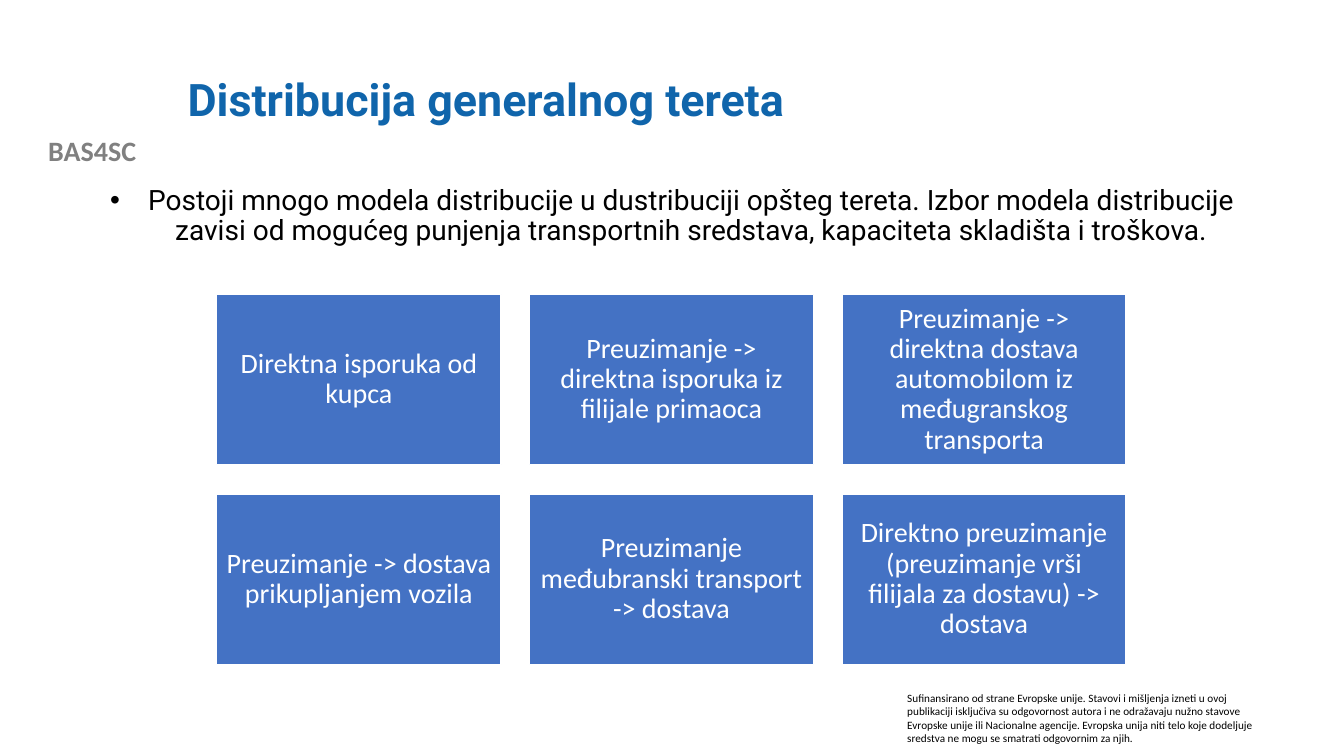
from pptx import Presentation
from pptx.dml.color import RGBColor
from pptx.enum.shapes import MSO_SHAPE
from pptx.enum.text import MSO_ANCHOR, MSO_AUTO_SIZE, PP_ALIGN
from pptx.util import Inches, Pt
from lxml.etree import SubElement
from pptx.oxml.ns import qn

WHITE = RGBColor(0xFF, 0xFF, 0xFF)
BLACK = RGBColor(0x00, 0x00, 0x00)
GRAY = RGBColor(0x80, 0x80, 0x80)
TITLE_BLUE = RGBColor(0x10, 0x65, 0xAB)
CARD_BLUE = RGBColor(0x44, 0x72, 0xC4)

MODELS = [
    "Direktna isporuka od kupca",
    "Preuzimanje -> direktna isporuka iz filijale primaoca",
    "Preuzimanje -> direktna dostava automobilom iz međugranskog transporta",
    "Preuzimanje -> dostava prikupljanjem vozila",
    "Preuzimanje međubranski transport -> dostava",
    "Direktno preuzimanje (preuzimanje vrši filijala za dostavu) -> dostava",
]


class DistributionSlide:
    heading_font = "Roboto"
    text_font = "Calibri"

    def __init__(self, presentation):
        self.slide = presentation.slides.add_slide(presentation.slide_layouts[1])

    def set_text(self, shape, text, size, color, font, bold=False,
                 align=PP_ALIGN.CENTER, anchor=MSO_ANCHOR.TOP, spacing=0.9):
        frame = shape.text_frame
        frame.word_wrap = True
        frame.auto_size = MSO_AUTO_SIZE.NONE
        frame.vertical_anchor = anchor
        frame.text = text
        paragraph = frame.paragraphs[0]
        paragraph.alignment = align
        paragraph.line_spacing = spacing
        paragraph.space_before = Pt(0)
        paragraph.font.name = font
        paragraph.font.size = Pt(size)
        paragraph.font.bold = bold
        paragraph.font.color.rgb = color
        return frame

    def place(self, shape, left, top, width, height):
        shape.left, shape.top = Inches(left), Inches(top)
        shape.width, shape.height = Inches(width), Inches(height)

    def title(self, text, *box):
        heading = self.slide.shapes.title
        self.place(heading, *box)
        self.set_text(heading, text, 32, TITLE_BLUE, self.heading_font, bold=True,
                      align=PP_ALIGN.LEFT, anchor=MSO_ANCHOR.MIDDLE)

    def body(self, text, *box):
        intro = self.slide.placeholders[1]
        self.place(intro, *box)
        properties = intro.text_frame.paragraphs[0]._p.get_or_add_pPr()
        properties.set("marL", "0")
        properties.set("indent", "0")
        SubElement(properties, qn("a:buNone"))
        self.set_text(intro, text, 20, BLACK, self.heading_font)

    def label(self, text, box, size, color, **style):
        caption = self.slide.shapes.add_textbox(*map(Inches, box))
        self.set_text(caption, text, size, color, self.text_font, spacing=1.0, **style)

    def card(self, text, *box):
        card = self.slide.shapes.add_shape(MSO_SHAPE.RECTANGLE, *map(Inches, box))
        card.shadow.inherit = False
        card.fill.solid()
        card.fill.fore_color.rgb = CARD_BLUE
        card.line.color.rgb = WHITE
        card.line.width = Pt(1)
        frame = self.set_text(card, text, 20, WHITE, self.text_font,
                              anchor=MSO_ANCHOR.MIDDLE)
        frame.margin_left = frame.margin_right = Inches(0.08)
        frame.margin_top = frame.margin_bottom = Inches(0.08)

    def card_grid(self, texts, left, top, columns, step_x, step_y, width, height):
        for index, text in enumerate(texts):
            row, column = divmod(index, columns)
            self.card(text, left + column * step_x, top + row * step_y, width, height)


def main():
    presentation = Presentation()
    presentation.slide_width = Inches(13.33)
    presentation.slide_height = Inches(7.5)

    page = DistributionSlide(presentation)
    page.title("Distribucija generalnog tereta", 1.76, 0.4, 10.66, 1.22)
    page.body(
        "Postoji mnogo modela distribucije u dustribuciji opšteg tereta. "
        "Izbor modela distribucije zavisi od mogućeg punjenja transportnih "
        "sredstava, kapaciteta skladišta i troškova.",
        0.92, 1.8, 11.5, 1.33)
    page.label("BAS4SC", (0, 1.28, 1.83, 0.44), 20, GRAY, bold=True)
    page.label(
        "Sufinansirano od strane Evropske unije. Stavovi i mišljenja izneti u ovoj "
        "publikaciji isključiva su odgovornost autora i ne odražavaju nužno stavove "
        "Evropske unije ili Nacionalne agencije. Evropska unija niti telo koje "
        "dodeljuje sredstva ne mogu se smatrati odgovornim za njih.",
        (8.9, 6.81, 3.7, 0.64), 8, BLACK, align=PP_ALIGN.LEFT)
    page.card_grid(MODELS, left=2.15, top=2.92, columns=3,
                   step_x=3.1, step_y=1.98, width=2.82, height=1.69)
    presentation.save("out.pptx")


if __name__ == "__main__":
    main()
